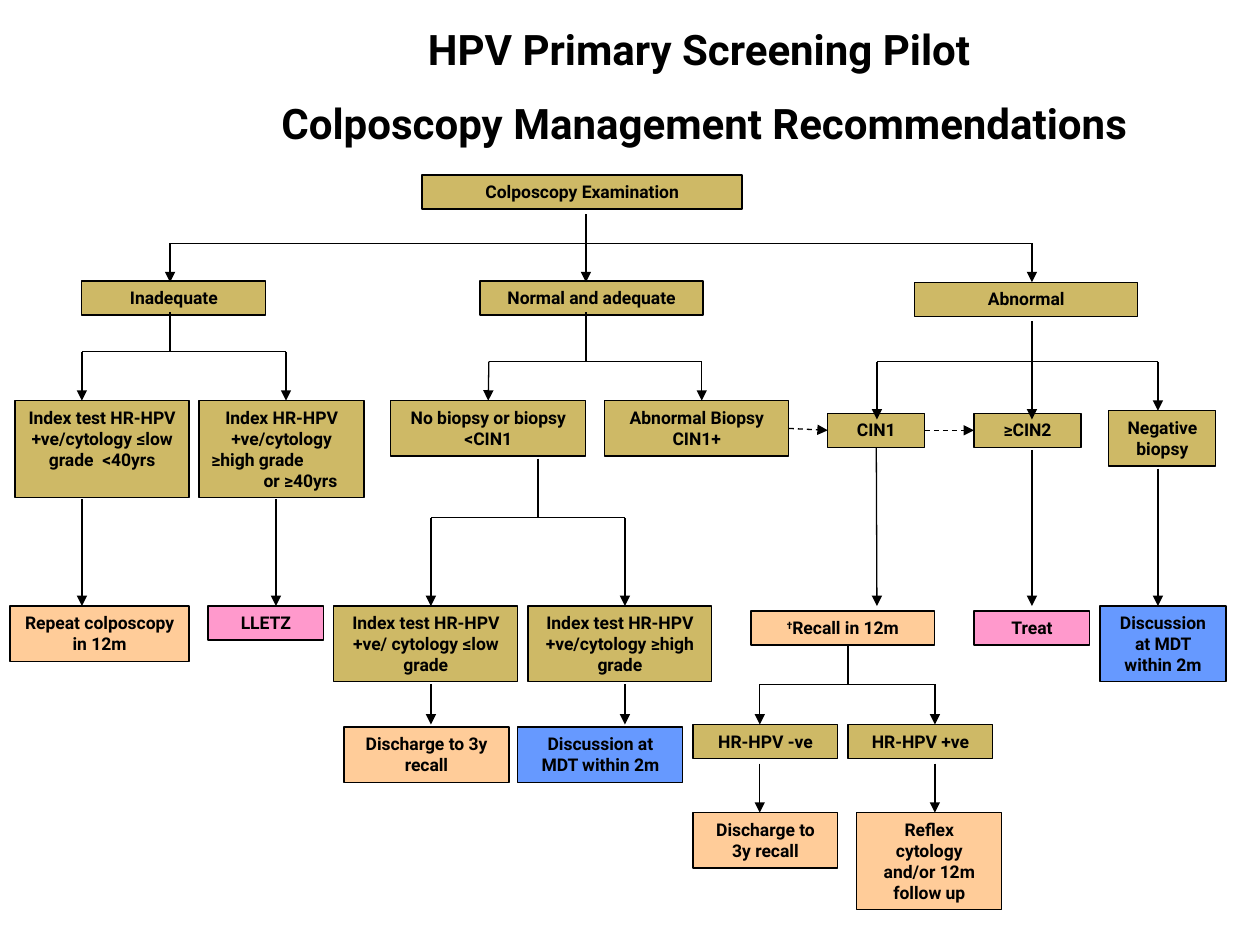
"""Build the flow chart of colposcopy management."""
from lxml.etree import SubElement
from pptx import Presentation
from pptx.dml.color import RGBColor
from pptx.enum.dml import MSO_LINE
from pptx.enum.shapes import MSO_CONNECTOR, MSO_SHAPE
from pptx.enum.text import MSO_ANCHOR, MSO_AUTO_SIZE, PP_ALIGN
from pptx.oxml.ns import qn
from pptx.util import Inches, Pt

HUES = {"ink": "000000", "gold": "CEB966", "peach": "FFCC99",
        "pink": "FF99CC", "blue": "6699FF"}
FRAME = {"word_wrap": True, "auto_size": MSO_AUTO_SIZE.SHAPE_TO_FIT_TEXT,
         "vertical_anchor": MSO_ANCHOR.TOP}
FONT = {"name": "Roboto", "bold": True}
NEAR = 0.025


def hue(name):
    return RGBColor.from_string(HUES[name])


def apply(item, style):
    for key, value in style.items():
        setattr(item, key, value)


class Chart:
    def __init__(self, slide):
        self.slide = slide
        self.sites = []

    def label(self, frame, paras, size, gap=0):
        apply(frame, FRAME)
        for i, text in enumerate(paras):
            para = frame.paragraphs[0] if i == 0 else frame.add_paragraph()
            apply(para, {"alignment": PP_ALIGN.CENTER, "space_before": Pt(gap if i else 0)})
            mark = text.startswith("†")
            for part in (text[0], text[1:]) if mark else (text,):
                run = para.add_run()
                run.text = part
                apply(run.font, {**FONT, "size": Pt(size)})
                run.font.color.rgb = hue("ink")
                if part == "†":
                    run._r.get_or_add_rPr().set("baseline", "30000")

    def title(self, x, y, w, h, *paras):
        area = self.slide.shapes.add_textbox(*map(Inches, (x, y, w, h)))
        self.label(area.text_frame, paras, 24, 13)

    def box(self, x, y, w, h, fill, *paras):
        shape = self.slide.shapes.add_shape(
            MSO_SHAPE.RECTANGLE, *map(Inches, (x, y, w, h)))
        shape.shadow.inherit = False
        shape.fill.solid()
        shape.fill.fore_color.rgb = hue(fill)
        shape.line.color.rgb = hue("ink")
        shape.line.width = Pt(0.75)
        self.label(shape.text_frame, paras, 10)
        spots = (x + w / 2, y), (x, y + h / 2), (x + w / 2, y + h), (x + w, y + h / 2)
        self.sites += [(shape, site, *spot) for site, spot in enumerate(spots)]
        return shape

    def join(self, hook, x, y):
        for shape, site, left, top in self.sites:
            if max(abs(left - x), abs(top - y)) < NEAR:
                hook(shape, site)
                return

    def link(self, x1, y1, x2, y2, arrow=True, dash=False):
        line = self.slide.shapes.add_connector(
            MSO_CONNECTOR.STRAIGHT, *map(Inches, (x1, y1, x2, y2)))
        self.join(line.begin_connect, x1, y1)
        self.join(line.end_connect, x2, y2)
        line.line.color.rgb = hue("ink")
        line.line.width = Pt(0.75)
        if dash:
            line.line.dash_style = MSO_LINE.DASH
        if arrow:
            SubElement(line.line._get_or_add_ln(), qn("a:tailEnd"), type="triangle")
        SubElement(line._element.spPr, qn("a:effectLst"))

    def fork(self, x, top, bar, drops):
        self.link(x, top, x, bar, arrow=False)
        self.link(min(drops), bar, max(drops), bar, arrow=False)
        for left, end in drops.items():
            self.link(left, bar, left, end)


BOXES = [
    (3.35, 1.39, 2.54, 0.27, "gold", "Colposcopy Examination"),
    (0.65, 2.23, 1.46, 0.27, "gold", "Inadequate"),
    (3.81, 2.23, 1.77, 0.27, "gold", "Normal and adequate"),
    (7.26, 2.24, 1.77, 0.27, "gold", "Abnormal"),
    (0.12, 3.18, 1.38, 0.77, "gold", "Index test HR-HPV +ve/cytology ≤low grade  <40yrs"),
    (3.1, 3.18, 1.55, 0.44, "gold", "No biopsy or biopsy <CIN1"),
    (4.8, 3.18, 1.46, 0.44, "gold", "Abnormal Biopsy CIN1+"),
    (6.57, 3.28, 0.77, 0.27, "gold", "CIN1"),
    (7.73, 3.28, 0.85, 0.27, "gold", "≥CIN2"),
    (8.8, 3.26, 0.85, 0.44, "gold", "Negative biopsy"),
    (0.08, 4.81, 1.42, 0.44, "peach", "Repeat colposcopy in 12m"),
    (1.65, 4.81, 0.92, 0.27, "pink", "LLETZ"),
    (2.65, 4.81, 1.46, 0.6, "gold", "Index test HR-HPV +ve/ cytology ≤low grade"),
    (4.19, 4.81, 1.46, 0.6, "gold", "Index test HR-HPV +ve/cytology ≥high grade"),
    (5.96, 4.85, 1.46, 0.27, "peach", "†Recall in 12m"),
    (7.73, 4.85, 0.92, 0.27, "pink", "Treat"),
    (8.73, 4.81, 1, 0.6, "blue", "Discussion at MDT within 2m"),
    (2.73, 5.77, 1.31, 0.44, "peach", "Discharge to 3y recall"),
    (4.11, 5.77, 1.31, 0.44, "blue", "Discussion at MDT within 2m"),
    (5.5, 5.75, 1.15, 0.27, "gold", "HR-HPV -ve"),
    (6.73, 5.75, 1.15, 0.27, "gold", "HR-HPV +ve"),
    (5.5, 6.45, 1.15, 0.44, "peach", "Discharge to 3y recall"),
    (6.8, 6.45, 1.15, 0.77, "peach", "Reflex cytology and/or 12m follow up"),
]
FORKS = [
    (4.65, 1.7, 1.93, {1.35: 2.24, 4.65: 2.24, 8.19: 2.24}),
    (1.35, 2.48, 2.79, {0.65: 3.18, 2.27: 3.18}),
    (4.65, 2.48, 2.87, {3.88: 3.18, 5.57: 3.18}),
    (8.19, 2.55, 2.87, {6.96: 3.33, 8.19: 3.33, 9.19: 3.26}),
    (4.27, 3.64, 4.11, {3.42: 4.81, 4.96: 4.81}),
    (6.73, 5.12, 5.43, {6.03: 5.75, 7.42: 5.75}),
]
DROPS = [
    (3.96, 4.81, (0.65, 2.19)),
    (3.57, 4.81, (6.96, 8.19)),
    (3.72, 4.81, (9.19,)),
    (5.43, 5.75, (3.42, 4.96)),
    (6.06, 6.45, (6.03, 7.42)),
]


def main():
    deck = Presentation()
    deck.slide_width, deck.slide_height = Inches(10), Inches(7.5)
    chart = Chart(deck.slides.add_slide(deck.slide_layouts[6]))
    chart.title(1.77, 0.14, 7.64, 1.11, "HPV Primary Screening Pilot ",
                "Colposcopy Management Recommendations")
    for box in BOXES:
        chart.box(*box)
    index = chart.box(1.58, 3.18, 1.31, 0.77, "gold", "Index HR-HPV +ve/cytology",
                      "≥high grade", "or ≥40yrs")
    grade, age = index.text_frame.paragraphs[1:]
    grade.alignment = PP_ALIGN.LEFT
    age._p.get_or_add_pPr().set("marL", str(Inches(0.3)))
    for fork in FORKS:
        chart.fork(*fork)
    for top, end, lefts in DROPS:
        for x in lefts:
            chart.link(x, top, x, end)
    for start, end in ((6.27, 6.57), (7.34, 7.73)):
        chart.link(start, 3.41, end, 3.41, dash=True)
    deck.save("out.pptx")


if __name__ == "__main__":
    main()
